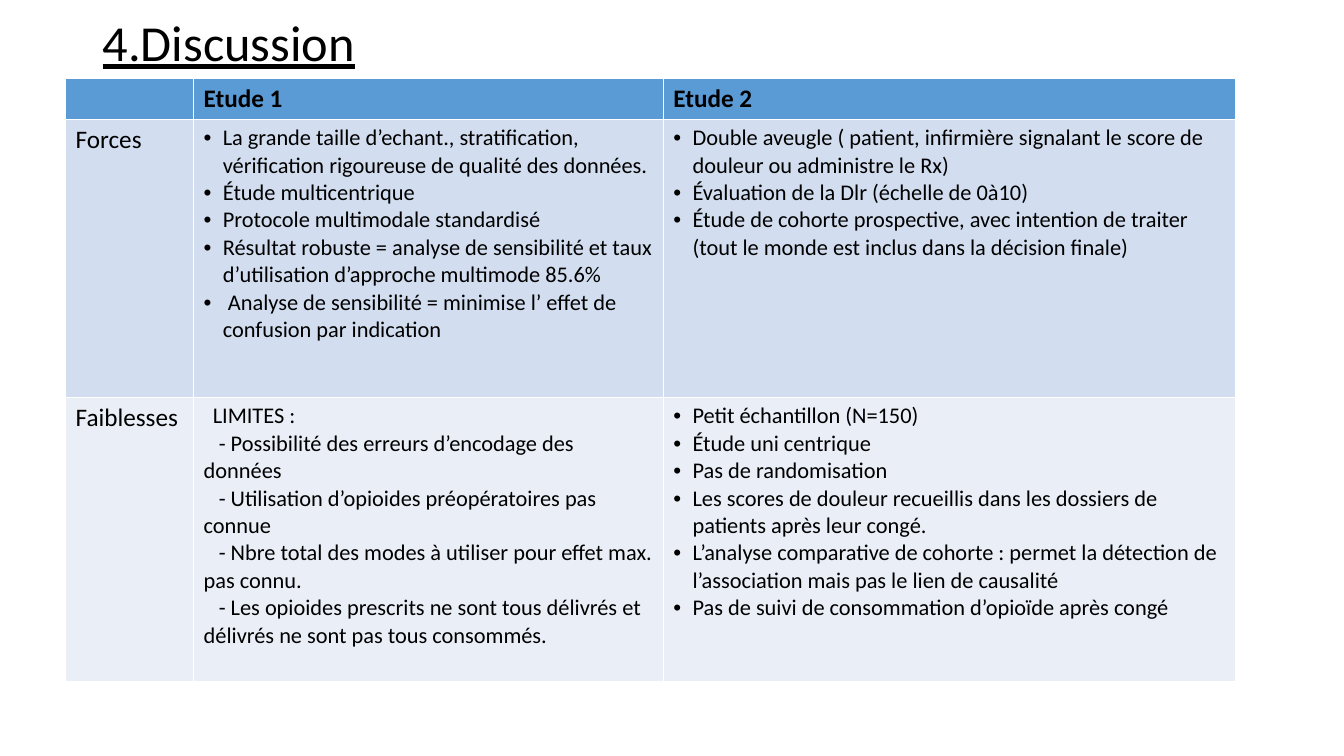
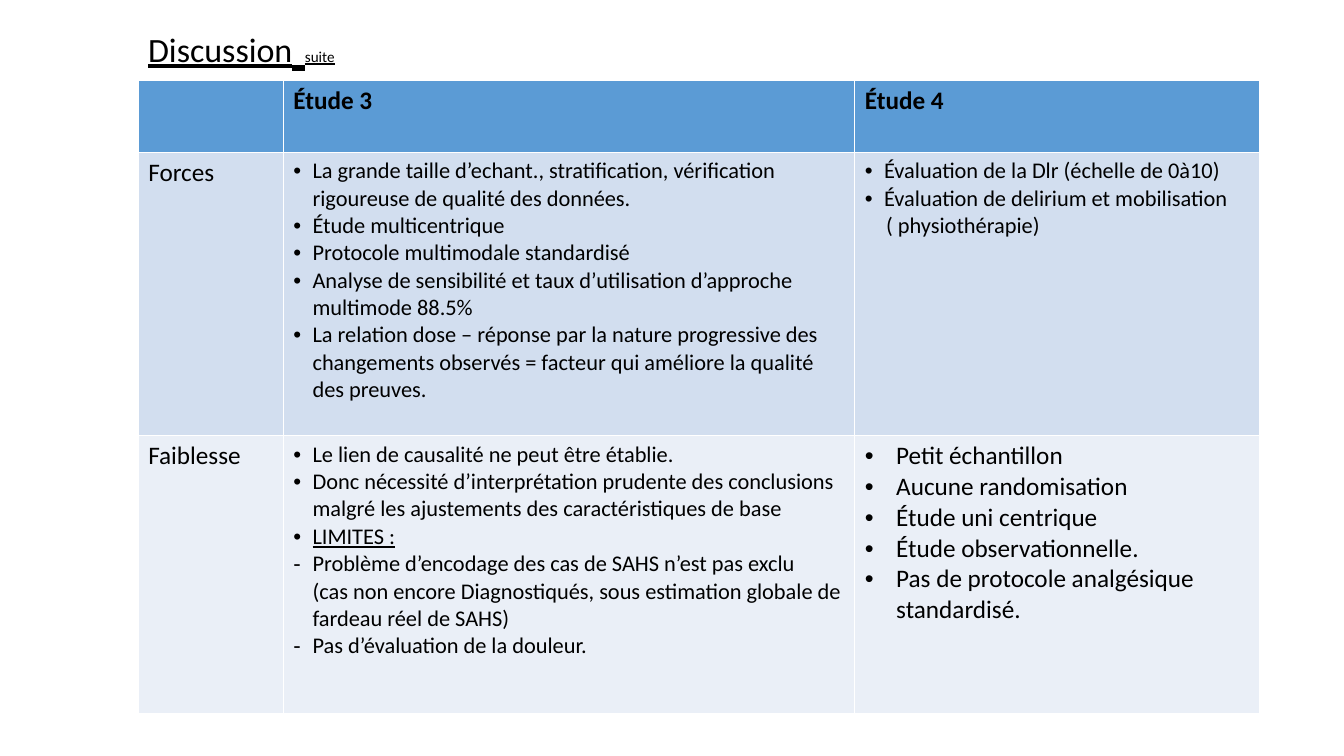
import pptx
import pptx.dml.color
import pptx.enum.text
import pptx.oxml.ns
import pptx.util
from lxml import etree


class Theme:
    font = "Calibri"
    ink = "000000"
    fills = ["5B9BD5", "D2DEEF", "EAEFF7"]  # one per table row
    head, body = 18, 16
    # kind: bullet, left indent and first-line indent in inches, size, underline
    kinds = {
        "label": (None, 0, 0, head, False),
        "dot": ("•", 0.19, -0.19, body, False),
        "key": ("•", 0.19, -0.19, body, True),
        "dash": ("-", 0.19, -0.19, body, False),
        "wide": ("•", 0.31, -0.31, head, False),
        "lead": (None, 0, 0.09, body, False),
        "item": (None, 0, 0.15, body, False),
        "more": (None, 0.21, 0, body, False),
    }


# Places are percentages of the slide's width and height
pages = [
    {
        "title": [("4.Discussion", 36)],
        "box": (6.9, 1.6, 86.25, 8.8),
        "spot": (4.88, 10.4),
        "cols": (9.53, 34.95, 42.6),
        "rows": (5.4, 36.8, 37.6),
        "cells": [
            [[], [("label", "Etude 1")], [("label", "Etude 2")]],
            [
                [("label", "Forces")],
                [
                    ("dot", "La grande taille d’echant., stratification, vérification rigoureuse de qualité des données."),
                    ("dot", "Étude multicentrique"),
                    ("dot", "Protocole multimodale standardisé"),
                    ("dot", "Résultat robuste = analyse de sensibilité et taux d’utilisation d’approche multimode 85.6%"),
                    ("dot", " Analyse de sensibilité = minimise l’ effet de confusion par indication"),
                ],
                [
                    ("dot", "Double aveugle ( patient, infirmière signalant le score de douleur ou administre le Rx)"),
                    ("dot", "Évaluation de la Dlr (échelle de 0à10)"),
                    ("dot", "Étude de cohorte prospective, avec intention de traiter (tout le monde est inclus dans la décision finale)"),
                ],
            ],
            [
                [("label", "Faiblesses")],
                [
                    ("lead", "LIMITES :"),
                    ("item", "- Possibilité des erreurs d’encodage des données"),
                    ("item", "- Utilisation d’opioides préopératoires pas connue"),
                    ("item", "- Nbre total des modes à utiliser pour effet max. pas connu."),
                    ("item", "- Les opioides prescrits ne sont tous délivrés et délivrés ne sont pas tous consommés."),
                ],
                [
                    ("dot", "Petit échantillon (N=150)"),
                    ("dot", "Étude uni centrique"),
                    ("dot", "Pas de randomisation"),
                    ("dot", "Les scores de douleur recueillis dans les dossiers de patients après leur congé."),
                    ("dot", "L’analyse comparative de cohorte : permet la détection de l’association mais pas le lien de causalité"),
                    ("dot", "Pas de suivi de consommation d’opioïde après congé"),
                ],
            ],
        ],
    },
    {
        "title": [("Discussion", 24.3), (" ", 39.6), ("suite", 10.8)],
        "box": (10.28, 1.07, 83.48, 9.6),
        "spot": (10.28, 10.67),
        "cols": (10.8, 42.53, 30.15),
        "rows": (9.47, 37.5, 36.8),
        "cells": [
            [[], [("label", "Étude 3")], [("label", "Étude 4")]],
            [
                [("label", "Forces")],
                [
                    ("dot", "La grande taille d’echant., stratification, vérification rigoureuse de qualité des données."),
                    ("dot", "Étude multicentrique"),
                    ("dot", "Protocole multimodale standardisé"),
                    ("dot", "Analyse de sensibilité et taux d’utilisation d’approche multimode 88.5%"),
                    ("dot", "La relation dose – réponse par la nature progressive des changements observés = facteur qui améliore la qualité des preuves."),
                ],
                [
                    ("dot", "Évaluation de la Dlr (échelle de 0à10)"),
                    ("dot", "Évaluation de delirium et mobilisation"),
                    ("more", "( physiothérapie)"),
                ],
            ],
            [
                [("label", "Faiblesse")],
                [
                    ("dot", "Le lien de causalité ne peut être établie."),
                    ("dot", "Donc nécessité d’interprétation prudente des conclusions malgré les ajustements des caractéristiques de base"),
                    ("key", "LIMITES :"),
                    ("dash", "Problème d’encodage des cas de SAHS n’est pas exclu\v(cas non encore Diagnostiqués, sous estimation globale de fardeau réel de SAHS)"),
                    ("dash", "Pas d’évaluation de la douleur."),
                ],
                [
                    ("wide", "Petit échantillon"),
                    ("wide", "Aucune randomisation"),
                    ("wide", "Étude uni centrique"),
                    ("wide", "Étude observationnelle."),
                    ("wide", "Pas de protocole analgésique standardisé."),
                ],
            ],
        ],
    },
]


def style(run, size, bold=False, line=False):
    font = run.font
    font.name = Theme.font
    font.size = pptx.util.Pt(size)
    font.bold = bold
    font.underline = line
    font.color.rgb = pptx.dml.color.RGBColor.from_string(Theme.ink)


def indent(para, mark, left, first):
    props = para._p.get_or_add_pPr()
    props.set("marL", str(pptx.util.Inches(left)))
    props.set("indent", str(pptx.util.Inches(first)))
    if mark:
        etree.SubElement(props, pptx.oxml.ns.qn("a:buFont"), typeface="Arial")
        etree.SubElement(props, pptx.oxml.ns.qn("a:buChar"), char=mark)


deck = pptx.Presentation()
deck.slide_width = pptx.util.Inches(13.33)
deck.slide_height = pptx.util.Inches(7.5)
wide = deck.slide_width / 100
high = deck.slide_height / 100

for page in pages:
    slide = deck.slides.add_slide(deck.slide_layouts[6])

    # Title
    x, y, w, h = page["box"]
    box = slide.shapes.add_textbox(int(x * wide), int(y * high), int(w * wide), int(h * high))
    frame = box.text_frame
    frame.word_wrap = True
    frame.vertical_anchor = pptx.enum.text.MSO_ANCHOR.MIDDLE
    para = frame.paragraphs[0]
    para.line_spacing = 0.9
    for text, size in page["title"]:
        run = para.add_run()
        run.text = text
        style(run, size, line=True)

    # Table grid
    x, y = page["spot"]
    cols, rows = page["cols"], page["rows"]
    table = slide.shapes.add_table(
        len(rows), len(cols), int(x * wide), int(y * high),
        int(sum(cols) * wide), int(sum(rows) * high)).table
    for col, share in zip(table.columns, cols):
        col.width = int(share * wide)
    for row, share in zip(table.rows, rows):
        row.height = int(share * high)

    # Table cells
    for r, line in enumerate(page["cells"]):
        for c, items in enumerate(line):
            cell = table.cell(r, c)
            cell.fill.solid()
            cell.fill.fore_color.rgb = pptx.dml.color.RGBColor.from_string(Theme.fills[r])
            frame = cell.text_frame
            frame.text = "\n".join(text for kind, text in items)
            for para, (kind, text) in zip(frame.paragraphs, items):
                mark, left, first, size, under = Theme.kinds[kind]
                indent(para, mark, left, first)
                for run in para.runs:
                    style(run, size, bold=r == 0, line=under)

deck.save("out.pptx")
